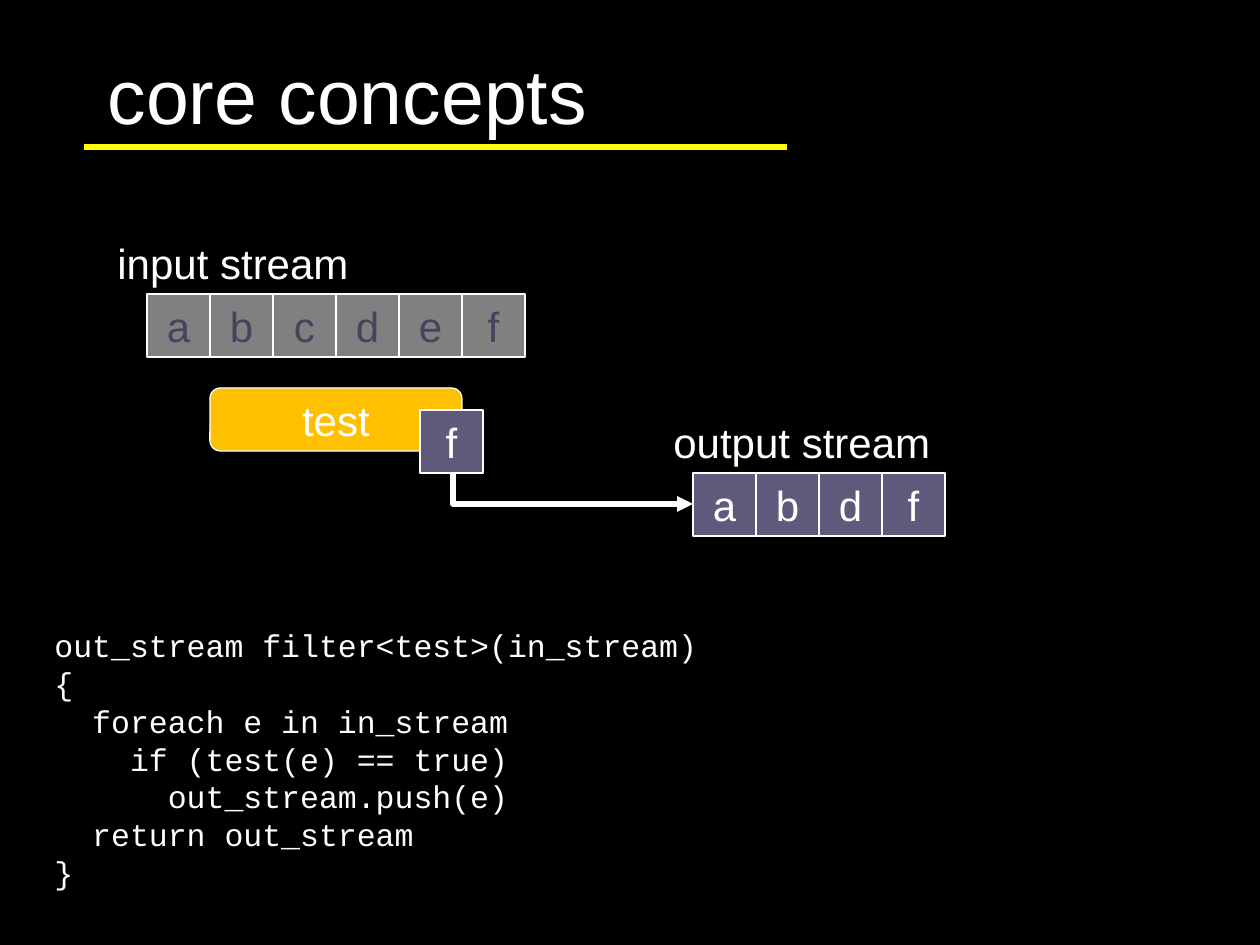
from lxml import etree
from pptx import Presentation
from pptx import util as u
from pptx.dml.color import RGBColor
from pptx.enum import shapes, text
from pptx.oxml.ns import qn

PX = 914400 / 126
WHITE, BLACK, YELLOW, AMBER = "FFFFFF", "000000", "FFFF00", "FFC000"
GREY, DIM, PURPLE = "808080", "48435C", "60597B"
CELL = 63


def write(shape, lines, size, color=WHITE, font="Arial", align=text.PP_ALIGN.LEFT, **frame_format):
    """Fill a shape with one paragraph per line; frame_format sets text frame attributes."""
    frame = shape.text_frame
    for name, value in frame_format.items():
        setattr(frame, name, value)
    frame.text = lines
    for paragraph in frame.paragraphs:
        paragraph.alignment = align
        for name, value in {"size": u.Pt(size), "name": font}.items():
            setattr(paragraph.font, name, value)
        paragraph.font.color.rgb = RGBColor.from_string(color)


def draw_line(kind, ends, color):
    """Add a 3 pt connector without shadow."""
    line = slide.shapes.add_connector(kind, *[round(n * PX) for n in ends])
    line.line.color.rgb = RGBColor.from_string(color)
    line.line.width = u.Pt(3)
    etree.SubElement(line._element.spPr, qn("a:effectLst"))
    return line


deck = Presentation()
deck.slide_width, deck.slide_height = round(1260 * PX), round(945 * PX)
slide = deck.slides.add_slide(deck.slide_layouts[5])
slide.background.fill.solid()
slide.background.fill.fore_color.rgb = RGBColor.from_string(BLACK)

# Title and its rule
title = slide.shapes.title
for side, px in {"left": 95, "top": 10, "width": 1071, "height": 168}.items():
    setattr(title, side, round(px * PX))
write(title, "core concepts", 44, vertical_anchor=text.MSO_ANCHOR.MIDDLE)
draw_line(shapes.MSO_CONNECTOR.STRAIGHT, (84, 147, 787, 147), YELLOW)

# Path from the tested element to the output stream
push = draw_line(shapes.MSO_CONNECTOR.ELBOW, (452, 451, 693, 504), WHITE)
bend = push._element.spPr.find(qn("a:prstGeom")).get_or_add_avLst()
etree.SubElement(bend, qn("a:gd"), name="adj1", fmla="val 400")
etree.SubElement(push.line._get_or_add_ln(), qn("a:tailEnd"), type="triangle")

# Streams, the test and the element that passes it
RECT, ROUNDED = shapes.MSO_SHAPE.RECTANGLE, shapes.MSO_SHAPE.ROUNDED_RECTANGLE
boxes = [(RECT, "abcdef"[i], 147 + i * CELL, 294, CELL, GREY, DIM) for i in range(6)]
boxes += [(ROUNDED, "test", 210, 388, 4 * CELL, AMBER, WHITE),
          (RECT, "f", 420, 410, CELL, PURPLE, WHITE)]
boxes += [(RECT, "abdf"[i], 693 + i * CELL, 473, CELL, PURPLE, WHITE) for i in range(4)]
for outline, label, left, top, width, fill, color in boxes:
    box = slide.shapes.add_shape(outline, *[round(n * PX) for n in (left, top, width, CELL)])
    box.shadow.inherit = False
    box.fill.solid()
    box.fill.fore_color.rgb = RGBColor.from_string(fill)
    box.line.color.rgb = RGBColor.from_string(WHITE)
    box.line.width = u.Pt(0.75)
    write(box, label, 24, color, align=text.PP_ALIGN.CENTER,
          vertical_anchor=text.MSO_ANCHOR.MIDDLE)

# Stream captions and pseudocode
code = """out_stream filter<test>(in_stream)
{
  foreach e in in_stream
    if (test(e) == true)
      out_stream.push(e)
  return out_stream
}"""
for words, left, top, width, height, size, font in [
    ("input stream", 105, 231, 258, 63, 24, "Arial"),
    ("output stream", 661, 410, 285, 63, 24, "Arial"),
    (code, 42, 620, 672, 280, 18, "Courier New"),
]:
    note = slide.shapes.add_textbox(*[round(n * PX) for n in (left, top, width, height)])
    write(note, words, size, font=font, word_wrap=False,
          auto_size=text.MSO_AUTO_SIZE.SHAPE_TO_FIT_TEXT)

deck.save("out.pptx")
